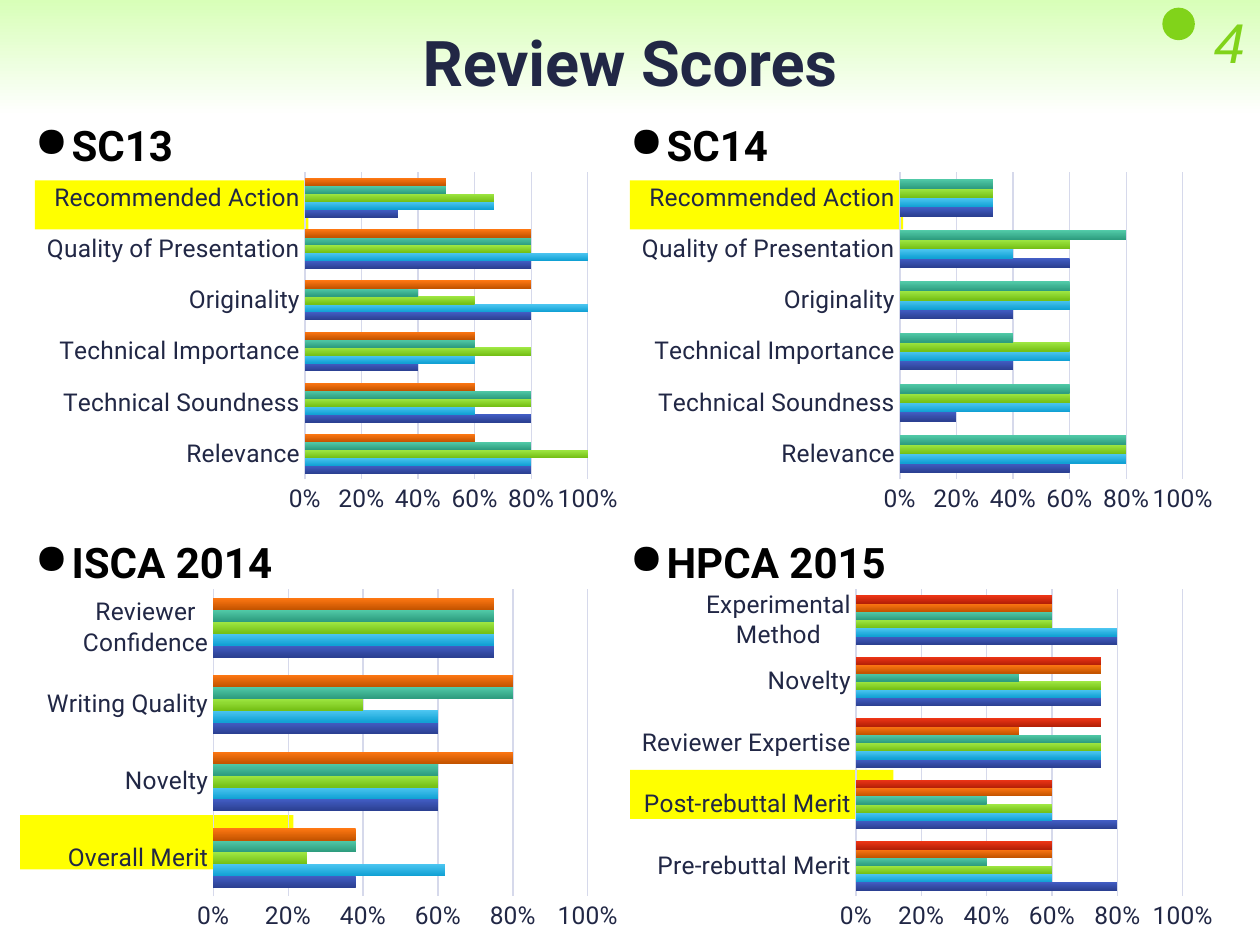
import pptx
import pptx.chart.data
import pptx.dml.color
import pptx.enum.chart
import pptx.enum.shapes
import pptx.enum.text
import pptx.oxml
import pptx.oxml.ns
import pptx.util

Pt = pptx.util.Pt
ALIGN = pptx.enum.text.PP_ALIGN
SHAPES = pptx.enum.shapes.MSO_SHAPE

COLORS = {"band": "D8FFB8", "white": "FFFFFF", "highlight": "FFFF00", "dark": "212745",
          "black": "000000", "accent": "81D31A", "grid": "D6D9EB"}
# Top and bottom colour of each reviewer's bars
SERIES_GRADIENTS = [("435EC5", "2B4092"), ("4EC7F2", "11A1D4"), ("A0E844", "75C016"),
                    ("52CBA9", "2E9D7F"), ("FF7813", "C45400"), ("F03617", "B52007")]

SC_CRITERIA = ["Relevance", "Technical Soundness", "Technical Importance",
               "Originality", "Quality of Presentation", "Recommended Action"]
# Highlights are left, top, width, height relative to the panel
PANELS = [
    {"title": "SC13", "column": 0, "row": 0, "highlight": (0, 31.7, 156.2, 28.1),
     "criteria": SC_CRITERIA,
     "scores": [(0.8, 0.8, 0.4, 0.8, 0.8, 0.33), (0.8, 0.6, 0.6, 1, 1, 0.67),
                (1, 0.8, 0.8, 0.6, 0.8, 0.67), (0.8, 0.8, 0.6, 0.4, 0.8, 0.5),
                (0.6, 0.6, 0.6, 0.8, 0.8, 0.5)]},
    {"title": "ISCA 2014", "column": 0, "row": 1, "highlight": (-8.5, 156.2, 156.2, 31),
     "criteria": ["Overall Merit", "Novelty", "Writing Quality", "Reviewer Confidence"],
     "scores": [(0.38, 0.6, 0.6, 0.75), (0.62, 0.6, 0.6, 0.75), (0.25, 0.6, 0.4, 0.75),
                (0.38, 0.6, 0.8, 0.75), (0.38, 0.8, 0.8, 0.75)]},
    {"title": "SC14", "column": 1, "row": 0, "highlight": (0, 31.7, 156.2, 28.1),
     "criteria": SC_CRITERIA,
     "scores": [(0.6, 0.2, 0.4, 0.4, 0.6, 0.33), (0.8, 0.6, 0.6, 0.6, 0.4, 0.33),
                (0.8, 0.6, 0.6, 0.6, 0.6, 0.33), (0.8, 0.6, 0.4, 0.6, 0.8, 0.33)]},
    {"title": "HPCA 2015", "column": 1, "row": 1, "highlight": (0, 130.3, 150.5, 28.1),
     "criteria": ["Pre-rebuttal Merit", "Post-rebuttal Merit", "Reviewer Expertise",
                  "Novelty", "Experimental Method"],
     "scores": [(0.8, 0.8, 0.75, 0.75, 0.8), (0.6, 0.6, 0.75, 0.75, 0.8),
                (0.6, 0.6, 0.75, 0.75, 0.6), (0.4, 0.4, 0.75, 0.5, 0.6),
                (0.6, 0.6, 0.5, 0.75, 0.6), (0.6, 0.6, 0.75, 0.75, 0.6)]},
]


def rgb(value):
    return pptx.dml.color.RGBColor.from_string(value)


def fill_gradient(fill, top_color, bottom_color):
    fill.gradient()
    fill.gradient_angle = 270
    for stop, color, position in zip(fill.gradient_stops, (top_color, bottom_color), (0, 1)):
        stop.color.rgb = rgb(color)
        stop.position = position


def add_plain_shape(slide, kind, box, color):
    shape = slide.shapes.add_shape(kind, *map(Pt, box))
    shape.shadow.inherit = False
    shape.line.fill.background()
    shape.fill.solid()
    shape.fill.fore_color.rgb = rgb(color)
    return shape


def style_font(font, size, color, name="Roboto"):
    font.size = Pt(size)
    font.name = name
    font.color.rgb = rgb(color)


def add_text(slide, box, text, size, color, align, name="Roboto", bold=False, italic=False):
    frame = slide.shapes.add_textbox(*map(Pt, box)).text_frame
    frame.word_wrap = True
    frame.vertical_anchor = pptx.enum.text.MSO_ANCHOR.MIDDLE
    frame.margin_left = frame.margin_right = frame.margin_top = frame.margin_bottom = 0
    paragraph = frame.paragraphs[0]
    paragraph.alignment = align
    run = paragraph.add_run()
    run.text = text
    style_font(run.font, size, color, name)
    run.font.bold = bold
    run.font.italic = italic
    return paragraph


def add_bullet(paragraph, indent):
    properties = paragraph._p.get_or_add_pPr()
    properties.set("marL", str(Pt(indent)))
    properties.set("indent", str(-Pt(indent)))
    properties.append(pptx.oxml.parse_xml(
        f'<a:buChar {pptx.oxml.ns.nsdecls("a")} char="●"/>'))


def add_header(slide, left, top, width, height):
    band = add_plain_shape(slide, SHAPES.RECTANGLE, (left, top, width, height), COLORS["white"])
    fill_gradient(band.fill, COLORS["band"], COLORS["white"])
    add_text(slide, (left + 20, top + 9.4, width - 40, 51), "Review Scores", 36,
             COLORS["dark"], ALIGN.CENTER, bold=True)
    # Page number with its dot
    add_plain_shape(slide, SHAPES.OVAL, (left + width - 55.8, top + 4.4, 18.6, 18.6),
                    COLORS["accent"])
    add_text(slide, (left + width - 48, top + 9.4, 39.4, 28), "4", 32,
             COLORS["accent"], ALIGN.RIGHT, name="Arial", italic=True)


def add_score_chart(slide, box, criteria, scores):
    data = pptx.chart.data.CategoryChartData()
    data.categories = criteria
    for number, values in enumerate(scores, 1):
        data.add_series(f"Series {number}", values)
    chart = slide.shapes.add_chart(pptx.enum.chart.XL_CHART_TYPE.BAR_CLUSTERED,
                                   *map(Pt, box), data).chart
    chart.has_legend = False
    chart.has_title = False
    style_font(chart.font, 14, COLORS["black"])

    plot = chart.plots[0]
    plot.gap_width = 150
    plot.vary_by_categories = False
    for series, gradient in zip(plot.series, SERIES_GRADIENTS):
        fill_gradient(series.format.fill, *gradient)

    # Axes
    for axis in (chart.category_axis, chart.value_axis):
        axis.major_tick_mark = axis.minor_tick_mark = pptx.enum.chart.XL_TICK_MARK.NONE
        style_font(axis.tick_labels.font, 14, COLORS["dark"])
    value_axis = chart.value_axis
    value_axis.minimum_scale = 0
    value_axis.maximum_scale = 1
    value_axis.major_unit = 0.2
    value_axis.tick_labels.number_format = "0%"
    value_axis.tick_labels.number_format_is_linked = False
    value_axis.has_major_gridlines = True
    value_axis.format.line.fill.background()
    for line in (chart.category_axis.format.line, value_axis.major_gridlines.format.line):
        line.color.rgb = rgb(COLORS["grid"])
        line.width = Pt(0.75)


def add_panel(slide, left, top, width, height, panel):
    # The highlight lies behind the chart
    x, y, highlight_width, highlight_height = panel["highlight"]
    add_plain_shape(slide, SHAPES.RECTANGLE,
                    (left + x, top + y, highlight_width, highlight_height), COLORS["highlight"])
    add_score_chart(slide, (left, top + 23, width, height - 23),
                    panel["criteria"], panel["scores"])
    heading = add_text(slide, (left, top, width, 22.3), panel["title"], 24,
                       COLORS["black"], ALIGN.LEFT, bold=True)
    add_bullet(heading, 20.9)


def main():
    presentation = pptx.Presentation()
    presentation.slide_width, presentation.slide_height = Pt(720), Pt(540)
    slide = presentation.slides.add_slide(presentation.slide_layouts[6])
    add_header(slide, 0, 0, 720, 66.2)
    for panel in PANELS:
        left = 20 + 340 * panel["column"]
        top = 71.3 + 238.3 * panel["row"]
        add_panel(slide, left, top, 340, 226.8, panel)
    presentation.save("out.pptx")


if __name__ == "__main__":
    main()
